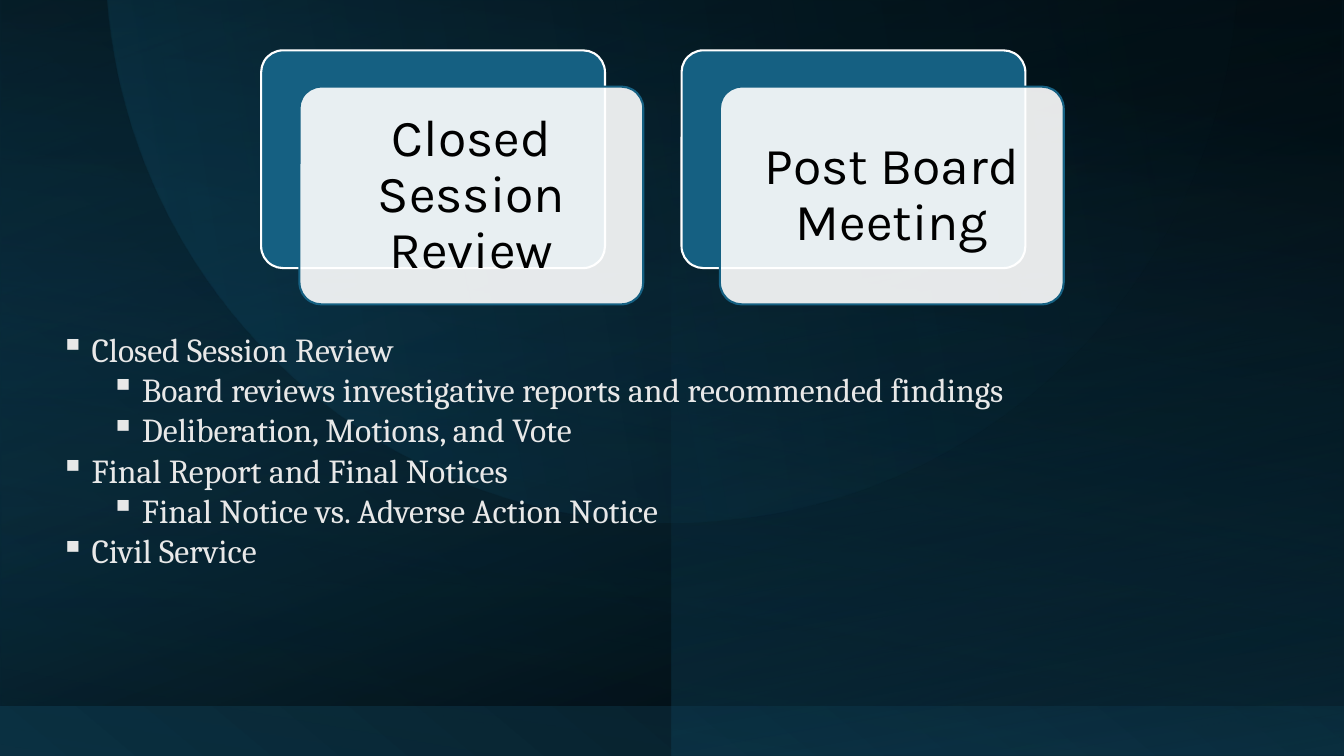
import math

from lxml import etree
from pptx import Presentation
from pptx.dml.color import RGBColor
from pptx.enum.shapes import MSO_SHAPE
from pptx.enum.text import MSO_ANCHOR, MSO_AUTO_SIZE, PP_ALIGN
from pptx.oxml.ns import qn
from pptx.util import Inches, Pt

RECT, ROUND_RECT = MSO_SHAPE.RECTANGLE, MSO_SHAPE.ROUNDED_RECTANGLE
CENTER, MIDDLE = PP_ALIGN.CENTER, MSO_ANCHOR.MIDDLE
W, H = 13.33, 7.5
NAVY, STEEL, TEAL = "0B3041", "104862", "156082"
BLACK, WHITE, LIGHT = "000000", "FFFFFF", "E8E8E8"

# Box, rotation, flipped, gradient angle, stops as (position, colour, opacity)
LAYERS = [
    ((0, 0, W, H), 0, True, 230, [(0, NAVY, 100), (100, BLACK, 100)]),
    ((0, 0, W, 7), 180, False, 250, [(1, STEEL, 59), (100, BLACK, 100)]),
    ((2.91, -2.9, H, 13.3), 90, True, 0, [(13, NAVY, 0), (99, BLACK, 28)]),
    ((W / 2, 0, W / 2, H), 0, True, 100, [(13, NAVY, 0), (99, STEEL, 50)]),
    ((0, 0, W, 7.52), 0, True, 80, [(13, BLACK, 35), (99, STEEL, 0)]),
]
CARDS = ["Closed Session Review", "Post Board Meeting"]
BULLETS = [
    (0, "Closed Session Review"),
    (1, "Board reviews investigative reports and recommended findings"),
    (1, "Deliberation, Motions, and Vote"),
    (0, "Final Report and Final Notices"),
    (1, "Final Notice vs. Adverse Action Notice"),
    (0, "Civil Service"),
]


def rgb(value):
    return RGBColor.from_string(value)


def inches(*values):
    return [Inches(v) for v in values]


def set_alpha(color, opacity):
    etree.SubElement(color, qn("a:alpha"), val=str(opacity * 1000))


def set_gradient(sp, angle, stops):
    sp.shadow.inherit = False
    sp.line.fill.background()
    sp.fill.gradient()
    grad = sp._element.spPr.find(qn("a:gradFill"))
    for child in list(grad):
        grad.remove(child)
    stop_list = etree.SubElement(grad, qn("a:gsLst"))
    for position, value, opacity in stops:
        stop = etree.SubElement(stop_list, qn("a:gs"), pos=str(position * 1000))
        set_alpha(etree.SubElement(stop, qn("a:srgbClr"), val=value), opacity)
    etree.SubElement(grad, qn("a:lin"), ang=str(angle * 60000), scaled="0")


def add_background(slide):
    for box, rotation, flipped, angle, stops in LAYERS:
        sp = slide.shapes.add_shape(RECT, *inches(*box))
        sp.rotation = rotation
        if flipped:
            sp._element.spPr.find(qn("a:xfrm")).set("flipH", "1")
        set_gradient(sp, angle, stops)


def add_disc(slide, cx, cy, radius):
    """Part of a disc that shows below the slide's top edge."""
    start = math.asin(-cy / radius)
    steps = 90
    angles = [start + (math.pi - 2 * start) * i / steps for i in range(steps + 1)]
    points = [(Inches(cx + radius * math.cos(a)), Inches(cy + radius * math.sin(a)))
              for a in angles]
    builder = slide.shapes.build_freeform(*points[0])
    builder.add_line_segments(points[1:], close=True)
    set_gradient(builder.convert_to_shape(), 170, [(7, NAVY, 4), (99, TEAL, 24)])


def add_bullets(slide, left, top, width, height):
    box = slide.shapes.add_textbox(*inches(left, top, width, height))
    tf = box.text_frame
    tf.word_wrap = True
    tf.auto_size = MSO_AUTO_SIZE.SHAPE_TO_FIT_TEXT
    for i, (level, text) in enumerate(BULLETS):
        p = tf.paragraphs[0] if i == 0 else tf.add_paragraph()
        p.text = text
        p.level = level
        pPr = p._p.get_or_add_pPr()
        pPr.set("marL", str(Inches(0.31 + 0.5 * level)))
        pPr.set("indent", str(Inches(-0.31)))
        etree.SubElement(pPr, qn("a:buChar"), char="▪")
        font = p.runs[0].font
        font.name, font.size = "Cambria", Pt(24)
        font.color.rgb = rgb(LIGHT)


def add_panel(group, box, fill, line):
    sp = group.shapes.add_shape(ROUND_RECT, *inches(*box))
    sp.adjustments[0] = 0.1
    sp.shadow.inherit = False
    sp.fill.solid()
    sp.fill.fore_color.rgb = rgb(fill)
    sp.line.color.rgb = rgb(line)
    sp.line.width = Pt(1.5)
    return sp


def add_card(group, left, top, width, height, text):
    # Back panel and translucent front panel
    add_panel(group, (left, top, width, height), TEAL, WHITE)
    left, top = left + 0.38, top + 0.36
    front = add_panel(group, (left, top, width, height), WHITE, TEAL)
    set_alpha(front._element.spPr.find(qn("a:solidFill"))[0], 90)

    # Label inside the front panel
    inset = 0.06
    label = group.shapes.add_textbox(
        *inches(left + inset, top + inset, width - 2 * inset, height - 2 * inset))
    tf = label.text_frame
    tf.word_wrap = True
    tf.vertical_anchor = MIDDLE
    tf.margin_left = tf.margin_right = Inches(0.15)
    tf.margin_top = tf.margin_bottom = Inches(0.15)
    tf.text = text
    p = tf.paragraphs[0]
    p.alignment, p.line_spacing = CENTER, 0.9
    font = p.runs[0].font
    font.name, font.size = "Karla", Pt(37)
    font.color.rgb = rgb(BLACK)


def add_cards(slide, left, top, pitch):
    group = slide.shapes.add_group_shape()
    for i, text in enumerate(CARDS):
        add_card(group, left + i * pitch, top, 3.41, 2.16, text)


def main():
    prs = Presentation()
    prs.slide_width, prs.slide_height = inches(W, H)
    slide = prs.slides.add_slide(prs.slide_layouts[6])
    add_background(slide)
    add_disc(slide, W / 2, -0.43, 5.61)
    add_bullets(slide, 0.5, 3.21, 12.13, 2.52)
    add_cards(slide, 2.59, 0.5, 4.17)
    prs.save("out.pptx")


if __name__ == "__main__":
    main()
